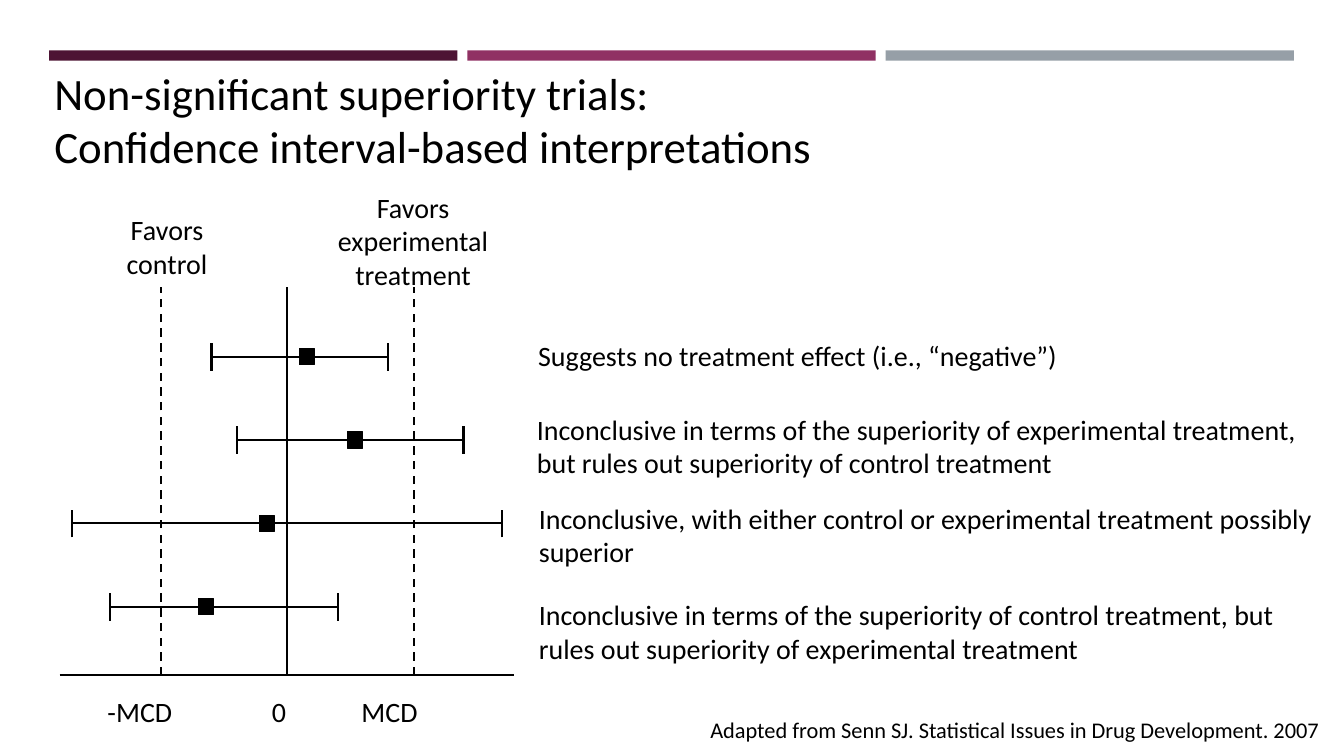
from lxml import etree
from pptx import Presentation
from pptx.dml.color import RGBColor
from pptx.enum.dml import MSO_LINE
from pptx.enum.shapes import MSO_CONNECTOR, MSO_SHAPE
from pptx.enum.text import MSO_AUTO_SIZE, PP_ALIGN
from pptx.oxml.ns import qn
from pptx.util import Cm, Pt

STRAIGHT = MSO_CONNECTOR.STRAIGHT
RECTANGLE = MSO_SHAPE.RECTANGLE
DASH = MSO_LINE.DASH
FIT_TEXT = MSO_AUTO_SIZE.SHAPE_TO_FIT_TEXT
LEFT, CENTER = PP_ALIGN.LEFT, PP_ALIGN.CENTER

COLORS = {"plum": "4D1434", "magenta": "903163", "gray": "969FA7", "black": "000000"}
BLACK = RGBColor.from_string(COLORS["black"])
FONT = "Calibri"

presentation = Presentation()
presentation.slide_width = Cm(33.87)
presentation.slide_height = Cm(19.05)
slide = presentation.slides.add_slide(presentation.slide_layouts[6])


def add_line(x1, y1, x2, y2, dash=None):
    connector = slide.shapes.add_connector(STRAIGHT, Cm(x1), Cm(y1), Cm(x2), Cm(y2))
    connector.line.color.rgb = BLACK
    connector.line.width = Pt(1.5)
    if dash:
        connector.line.dash_style = dash
    etree.SubElement(connector._element.spPr, qn("a:effectLst"))


def add_text(text, left, top, width, height, size=20, align=LEFT, wrap=True):
    box = slide.shapes.add_textbox(Cm(left), Cm(top), Cm(width), Cm(height))
    text_frame = box.text_frame
    text_frame.word_wrap = wrap
    text_frame.auto_size = FIT_TEXT
    text_frame.text = text
    for paragraph in text_frame.paragraphs:
        paragraph.alignment = align
        for run in paragraph.runs:
            run.font.name = FONT
            run.font.size = Pt(size)
            run.font.color.rgb = BLACK


# Header bars
for index, name in enumerate(["plum", "magenta", "gray"]):
    bar = slide.shapes.add_shape(
        RECTANGLE, Cm(1.24 + 10.54 * index), Cm(1.27), Cm(10.29), Cm(0.26))
    bar.shadow.inherit = False
    bar.fill.solid()
    bar.fill.fore_color.rgb = RGBColor.from_string(COLORS[name])
    bar.line.fill.background()

# Title
add_text("Non-significant superiority trials:\nConfidence interval-based interpretations",
         1.12, 1.52, 20.07, 3, size=32, wrap=False)

# Axis with the zero line and the MCD limits
ZERO_X, MCD_OFFSET = 7.24, 3.19
AXIS_Y, PLOT_TOP = 17.02, 7.24
add_line(1.5, AXIS_Y, 12.95, AXIS_Y)
for offset, dash in [(-MCD_OFFSET, DASH), (0, None), (MCD_OFFSET, DASH)]:
    add_line(ZERO_X + offset, AXIS_Y, ZERO_X + offset, PLOT_TOP, dash)

for label, left, width in [("-MCD", 2.46, 3.18), ("0", 6.6, 1.27), ("MCD", 8.86, 3.18)]:
    add_text(label, left, 17.37, width, 1.14)

# Direction labels
add_text("Favors control", 2.62, 5.23, 3.18, 2.03, align=CENTER)
add_text("Favors experimental treatment", 8.05, 4.67, 4.72, 2.92, align=CENTER)

# Confidence intervals: low, estimate, high, then note and its left, top, width, height
FIRST_ROW_Y, ROW_STEP, CAP = 8.99, 2.1, 0.35
MARK_WIDTH, MARK_HEIGHT = 0.38, 0.41
trials = [
    (5.33, 7.73, 9.78, "Suggests no treatment effect (i.e., “negative”)",
     (13.31, 8.41, 20.04, 1.14)),
    (5.97, 8.95, 11.68, "Inconclusive in terms of the superiority of experimental treatment, "
     "but rules out superiority of control treatment", (13.28, 10.26, 20.04, 2.03)),
    (1.82, 6.72, 12.65, "Inconclusive, with either control or experimental treatment "
     "possibly superior", (13.33, 12.5, 19.99, 2.03)),
    (2.77, 5.19, 8.51, "Inconclusive in terms of the superiority of control treatment, "
     "but rules out superiority of experimental treatment", (13.33, 14.94, 19.33, 2.03)),
]
for row, (low, estimate, high, note, note_place) in enumerate(trials):
    y = FIRST_ROW_Y + ROW_STEP * row
    add_line(low, y, high, y)
    for end in (low, high):
        add_line(end, y + CAP, end, y - CAP)
    mark = slide.shapes.add_shape(
        RECTANGLE, Cm(estimate - MARK_WIDTH / 2), Cm(y - MARK_HEIGHT / 2),
        Cm(MARK_WIDTH), Cm(MARK_HEIGHT))
    mark.shadow.inherit = False
    mark.fill.solid()
    mark.fill.fore_color.rgb = BLACK
    mark.line.color.rgb = BLACK
    mark.line.width = Pt(0.75)
    add_text(note, *note_place)

# Credit
add_text("Adapted from Senn SJ. Statistical Issues in Drug Development. 2007",
         17.65, 17.93, 16.92, 0.94, size=16)

presentation.save("out.pptx")
